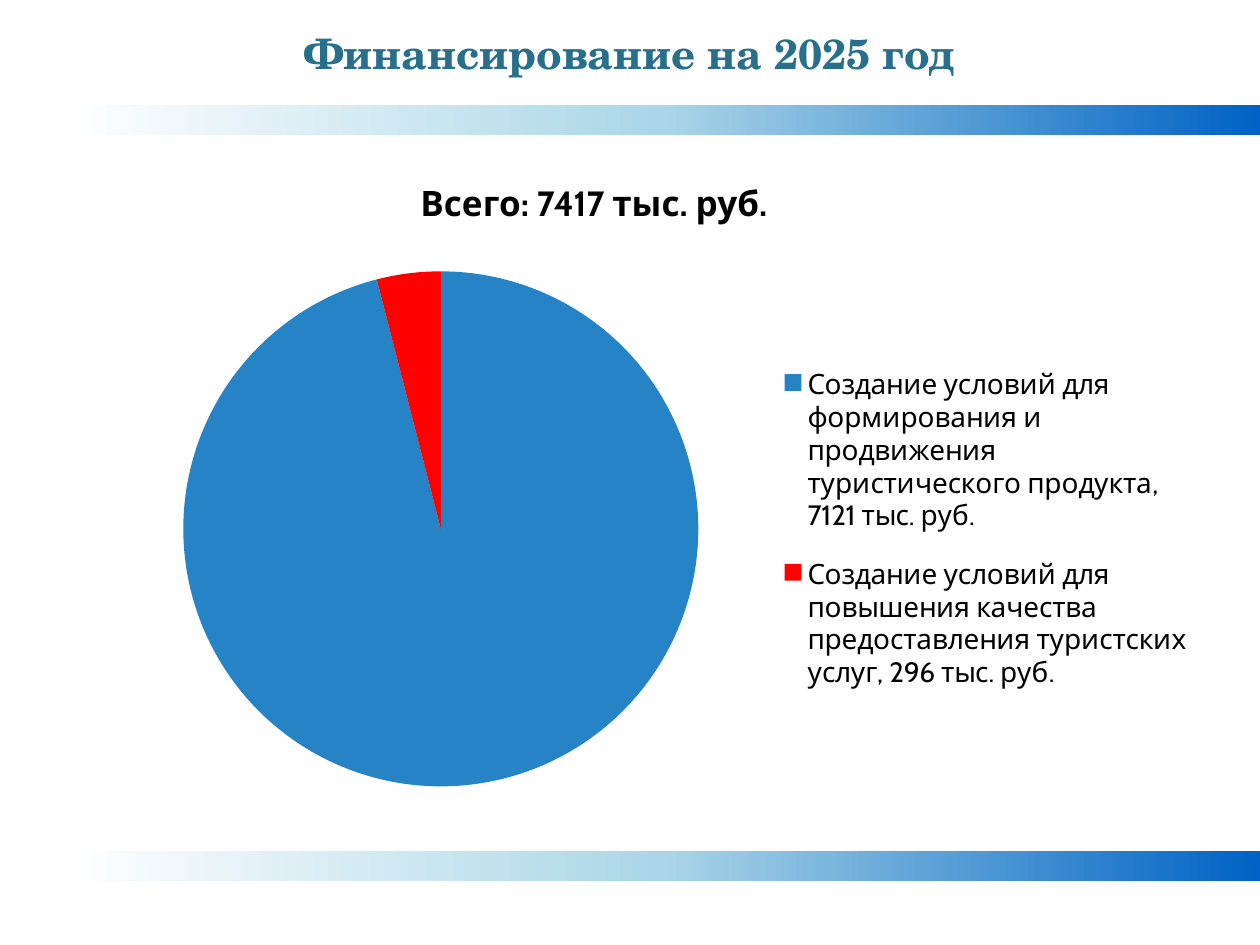
from lxml import etree
from copy import deepcopy
from pptx import Presentation
from pptx.chart.data import CategoryChartData
from pptx.dml.color import RGBColor
from pptx.enum.chart import XL_CHART_TYPE, XL_LEGEND_POSITION
from pptx.enum.shapes import MSO_SHAPE
from pptx.enum.text import PP_ALIGN
from pptx.oxml.ns import qn
from pptx.util import Pt

PX = 914400 // 126
W, H = 1260, 945
RECT = MSO_SHAPE.RECTANGLE
PIE = XL_CHART_TYPE.PIE
LEGEND_RIGHT = XL_LEGEND_POSITION.RIGHT
LEFT, CENTER = PP_ALIGN.LEFT, PP_ALIGN.CENTER

COLORS = {
    "title": "276F8B", "text": "000000",
    "band_dark": "0062C4", "band_mid": "AAD6E7", "band_light": "FFFFFF",
    "promotion": "2683C6", "quality": "FF0000",
}
FUNDING = [
    ("Создание условий для формирования и продвижения туристического "
     "продукта, 7121 тыс. руб.", 96, "promotion"),
    ("Создание условий для повышения качества предоставления туристских "
     "услуг, 296 тыс. руб.", 4, "quality"),
]


def rgb(name):
    return RGBColor.from_string(COLORS[name])


def px(*lengths):
    return [n * PX for n in lengths]


def style_font(font, name, size, color, bold=False):
    font.name, font.size, font.bold = name, Pt(size), bold
    font.color.rgb = rgb(color)


def add_band(slide, top):
    """Horizontal stripe fading from dark on the right to white on the left."""
    s = slide.shapes.add_shape(RECT, *px(64, top, W - 64, 30))
    s.shadow.inherit = False
    s.line.fill.background()
    s.fill.gradient()
    s.fill.gradient_angle = 180
    stops = s.fill.gradient_stops
    first = s._element.spPr.find(".//" + qn("a:gs"))
    first.addnext(deepcopy(first))
    stops = s.fill.gradient_stops
    for stop, pos, name in zip(stops, (0, 0.5, 1),
                               ("band_dark", "band_mid", "band_light")):
        stop.position = pos
        stop.color.rgb = rgb(name)


def add_text(slide, text, box, font, size, color, align, wrap):
    s = slide.shapes.add_textbox(*px(*box))
    tf = s.text_frame
    tf.word_wrap = wrap
    p = tf.paragraphs[0]
    p.alignment = align
    r = p.add_run()
    r.text = text
    style_font(r.font, font, size, color, bold=True)


def set_layout(parent, before, x, y, w, h, inner=False):
    """Place a chart part by fractions of the chart area."""
    for old in parent.findall(qn("c:layout")):
        parent.remove(old)
    layout = etree.Element(qn("c:layout"))
    manual = etree.SubElement(layout, qn("c:manualLayout"))
    values = [("xMode", "edge"), ("yMode", "edge"),
              ("x", x), ("y", y), ("w", w), ("h", h)]
    if inner:
        values.insert(0, ("layoutTarget", "inner"))
    for tag, value in values:
        etree.SubElement(manual, qn("c:" + tag)).set("val", str(value))
    parent.find(qn(before)).addprevious(layout)


def add_funding_pie(slide):
    data = CategoryChartData()
    data.categories = [label for label, _, _ in FUNDING]
    data.add_series("Series 1", [share for _, share, _ in FUNDING])
    chart = slide.shapes.add_chart(PIE, *px(105, 255, 1101, 548), data).chart
    style_font(chart.font, "Calibri", 18, "text")
    chart.has_title = False
    plot = chart.plots[0]
    plot.vary_by_categories = True
    for i, (_, _, color) in enumerate(FUNDING):
        fill = plot.series[0].points[i].format.fill
        fill.solid()
        fill.fore_color.rgb = rgb(color)
    chart.has_legend = True
    legend = chart.legend
    legend.position = LEGEND_RIGHT
    legend.include_in_layout = False
    style_font(legend.font, "Cabin", 16, "text")
    area = chart._chartSpace.chart.plotArea
    set_layout(area, "c:pieChart", 0.07, 0.03, 0.47, 0.94, inner=True)
    set_layout(legend._element, "c:overlay", 0.61, 0.16, 0.38, 0.68)


def main():
    prs = Presentation()
    prs.slide_width, prs.slide_height = px(W, H)
    slide = prs.slides.add_slide(prs.slide_layouts[6])
    for top in (105, 851):
        add_band(slide, top)
    add_text(slide, "Финансирование на 2025 год", (0, 21, W, 63),
             "TeX Gyre Schola", 24, "title", CENTER, True)
    add_text(slide, "Всего: 7417 тыс. руб.", (408, 175, 396, 55),
             "Cabin", 20, "text", LEFT, False)
    add_funding_pie(slide)
    prs.save("out.pptx")


if __name__ == "__main__":
    main()
